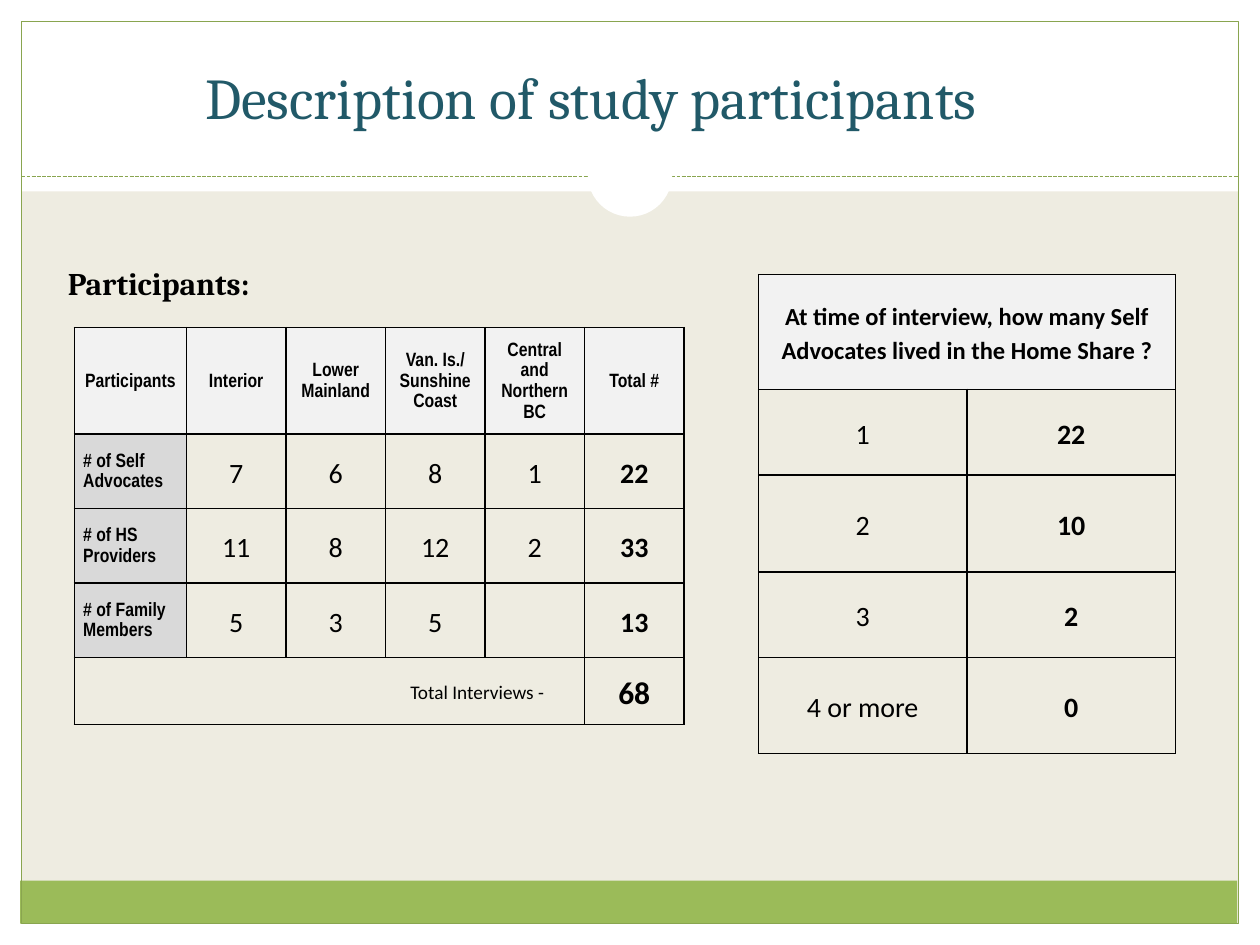
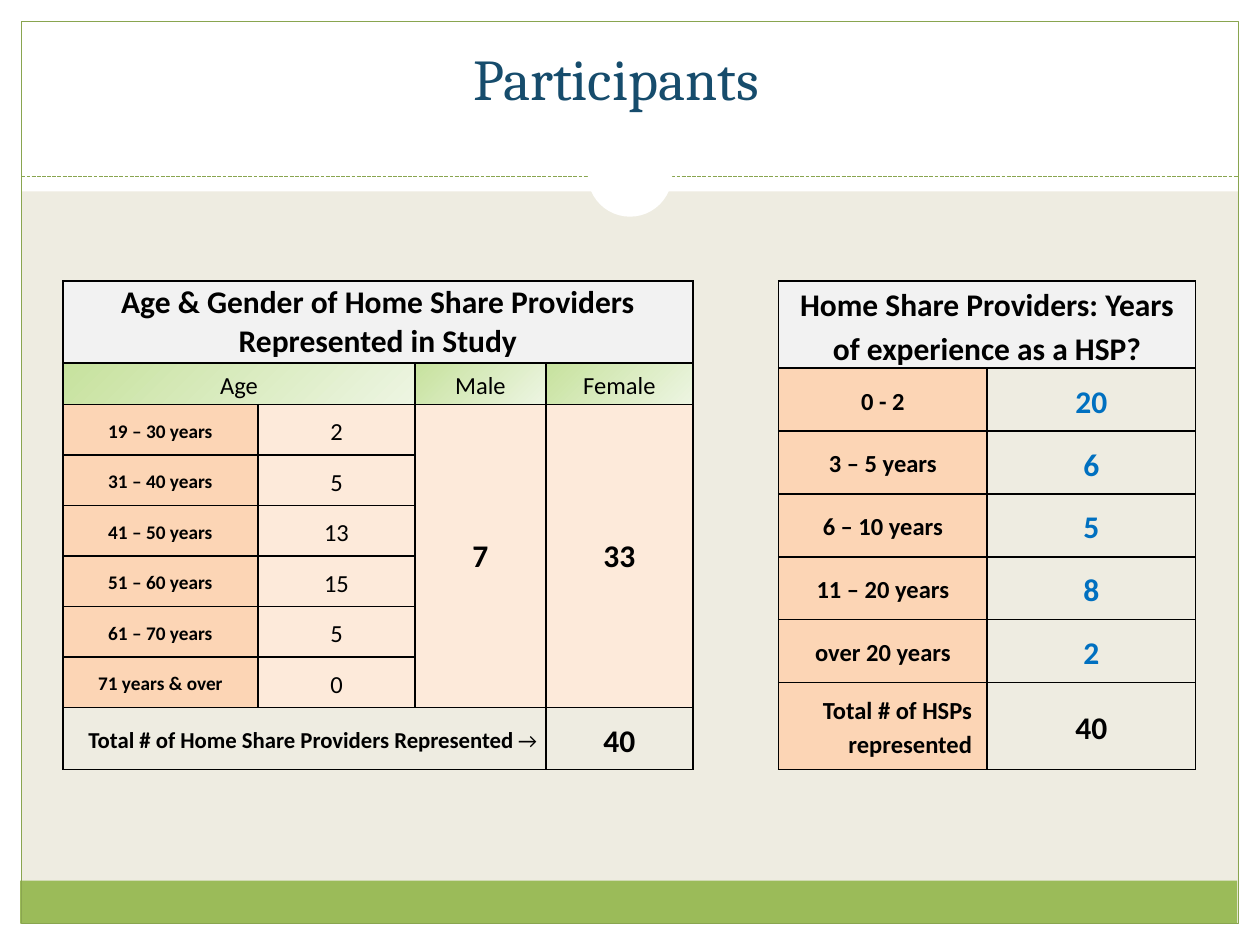
from pptx import Presentation
from pptx.dml.color import RGBColor
from pptx.enum.dml import MSO_LINE
from pptx.enum.shapes import MSO_CONNECTOR, MSO_SHAPE
from pptx.enum.text import MSO_ANCHOR, PP_ALIGN
from pptx.oxml import parse_xml
from pptx.oxml.ns import nsdecls
from pptx.util import Inches, Pt

RECT, OVAL = MSO_SHAPE.RECTANGLE, MSO_SHAPE.OVAL
LINE, DASH = MSO_CONNECTOR.STRAIGHT, MSO_LINE.SQUARE_DOT
LEFT, MID, RIGHT = PP_ALIGN.LEFT, PP_ALIGN.CENTER, PP_ALIGN.RIGHT
CENTRE = MSO_ANCHOR.MIDDLE

# The page is a grid of 100 columns and 75 rows
PAGE = (0, 0, 100, 75)
UNIT = Inches(0.1)

WHITE, BLACK, BLUE = "FFFFFF", "000000", "0070C0"
CREAM, GREEN, EDGE = "EEECE1", "9BBB59", "89A54F"
PALE, GREY = "F2F2F2", "D9D9D9"
PEACH, BLUSH = "FCD5B5", "FDEADA"
LIME = ("C7E29E", "EDF5E2")


def paint(code):
    return RGBColor.from_string(code)


def grid(*cells):
    return [int(n * UNIT) for n in cells]


def apply(part, values):
    for key, value in values.items():
        setattr(part, key, value)


def face(font, size, bold=False, name="Calibri", ink=BLACK):
    apply(font, {"size": Pt(size), "bold": bold, "name": name})
    font.color.rgb = paint(ink)


# Text styles of table cells
def style(size, bold=False, fill=None, name="Calibri", ink=BLACK,
          align=MID, lines=1.15, right=0.07):
    return {
        "font": {"size": size, "bold": bold, "name": name, "ink": ink},
        "para": {"alignment": align, "line_spacing": lines},
        "fill": fill,
        "right": right,
    }


HEAD = style(11, True, PALE, "Arial Narrow")
SIDE = style(11, True, GREY, "Arial Narrow", align=LEFT)
PLAIN, BOLD = style(16), style(16, True)
NOTE = style(11, align=RIGHT, right=0.32)
TOTAL = style(18, True)
ASK = style(14, True, PALE)
BANNER = style(18, True, PALE)
TIGHT = style(18, True, PALE, lines=1.0)
LABEL = style(14, fill=LIME)
AGE, COUNT = style(11, True, PEACH), style(14, fill=BLUSH)
SEX = style(18, True, BLUSH, lines=1.0)
SUM = style(13, True, align=RIGHT)
YEARS = style(14, True, PEACH)
SCORE = style(18, True, ink=BLUE)
ALL = style(14, True, PEACH, align=RIGHT, right=0.12)


# Background, bands and outline shared by the slides
def frame(slide, box):
    x, y, w, h = box
    slide.background.fill.solid()
    slide.background.fill.fore_color.rgb = paint(CREAM)
    rim = 1.7

    def block(kind, spot, fill=None, edge=None):
        shape = slide.shapes.add_shape(kind, *grid(*spot))
        shape.shadow.inherit = False
        if fill:
            shape.fill.solid()
            shape.fill.fore_color.rgb = paint(fill)
        else:
            shape.fill.background()
        if edge:
            shape.line.color.rgb = paint(edge)
            shape.line.width = Pt(0.75)
        else:
            shape.line.fill.background()

    # Title band with its dashed rule and notch
    block(RECT, (x, y, w, 15.2), WHITE)
    rule = slide.shapes.add_connector(
        LINE, *grid(x + rim, y + 14, x + w - rim, y + 14))
    rule.line.color.rgb = paint(EDGE)
    apply(rule.line, {"width": Pt(0.75), "dash_style": DASH})
    rule._element.spPr.append(
        parse_xml(f"<a:effectLst {nsdecls('a')}/>"))
    block(OVAL, (x + w / 2 - 3.35, y + 10.5, 6.7, 6.7), WHITE)

    # White rim
    for spot in ((x, y + h - rim, w, rim), (x, y, w, rim),
                 (x + w - rim, y, rim, h), (x, y, rim, h)):
        block(RECT, spot, WHITE)

    # Footer band and outline
    block(RECT, (x + 1.6, y + 69.9, w - 2 * rim, 3.4), GREEN)
    block(RECT, (x + rim, y + rim, w - 2 * rim, h - 2 * rim), edge=EDGE)


def label(slide, box, text, size, ink, bold=False):
    shape = slide.shapes.add_textbox(*grid(*box))
    shape.text_frame.word_wrap = False
    run = shape.text_frame.paragraphs[0].add_run()
    run.text = text
    face(run.font, size, bold, "Cambria", ink)


def border(cell):
    props = cell._tc.get_or_add_tcPr()
    for side in "LRTB":
        props.append(parse_xml(
            f'<a:ln{side} {nsdecls("a")} w="12700"><a:solidFill>'
            f'<a:srgbClr val="{BLACK}"/></a:solidFill></a:ln{side}>'))


def shade(cell, fill):
    if fill is None:
        cell.fill.background()
    elif isinstance(fill, tuple):
        cell.fill.gradient()
        cell.fill.gradient_angle = 315
        for stop, code in zip(cell.fill.gradient_stops, fill):
            stop.color.rgb = paint(code)
    else:
        cell.fill.solid()
        cell.fill.fore_color.rgb = paint(fill)


def write(cell, text, look):
    shade(cell, look["fill"])
    apply(cell, {"margin_left": Inches(0.07), "vertical_anchor": CENTRE,
                 "margin_right": Inches(look["right"])})
    cell.text = text
    for para in cell.text_frame.paragraphs:
        apply(para, look["para"])
        for run in para.runs:
            face(run.font, **look["font"])


# A row is its height, its texts and its styles; None is a merged cell
def chart(slide, box, cols, rows, spans):
    x, y, w, h = box
    table = slide.shapes.add_table(
        len(rows), len(cols), *grid(x, y, w, h)).table
    apply(table, {"first_row": False, "horz_banding": False})
    for col, part in zip(table.columns, cols):
        col.width = int(w * UNIT * part / sum(cols))
    tall = sum(row[0] for row in rows)
    for r, (part, texts, looks) in enumerate(rows):
        table.rows[r].height = int(h * UNIT * part / tall)
        for c, (text, look) in enumerate(zip(texts, looks)):
            cell = table.cell(r, c)
            apply(cell, {"margin_top": 0, "margin_bottom": 0})
            border(cell)
            if text is not None:
                write(cell, text, look)
    for top, left, low, end in spans:
        table.cell(top, left).merge(table.cell(low, end))
    return table


def study(slide, box):
    x, y, w, h = box
    frame(slide, box)
    label(slide, (x + 15.3, y + 4.4, 69, 6.6),
          "Description of study participants", 33, "215968")
    label(slide, (x + 4.4, y + 20.5, 20, 4), "Participants:", 18, BLACK, True)

    # Participants by region
    looks = [SIDE] + [PLAIN] * 4 + [BOLD]
    body = [
        ["# of Self Advocates", "7", "6", "8", "1", "22"],
        ["# of HS Providers", "11", "8", "12", "2", "33"],
        ["# of Family Members", "5", "3", "5", "", "13"],
    ]
    heads = ["Participants", "Interior", "Lower Mainland",
             "Van. Is./ Sunshine Coast", "Central and Northern BC", "Total #"]
    total = ["Total Interviews -"] + [None] * 4 + ["68"]
    rows = [(0.84, heads, [HEAD] * 6)]
    rows += [(0.59, texts, looks) for texts in body]
    rows += [(0.53, total, [NOTE] * 5 + [TOTAL])]
    chart(slide, (x + 5.9, y + 26, 48.4, 31.5), [0.89] + [0.79] * 5,
          rows, [(4, 0, 4, 4)])

    # Self advocates in each home
    ask = "At time of interview, how many Self Advocates lived in the Home Share ?"
    homes = [(0.68, "1", "22"), (0.77, "2", "10"),
             (0.68, "3", "2"), (0.76, "4 or more", "0")]
    rows = [(0.91, [ask, None], [ASK] * 2)]
    rows += [(part, pair, [PLAIN, BOLD]) for part, *pair in homes]
    chart(slide, (x + 60.2, y + 21.8, 33.1, 38), [1, 1],
          rows, [(0, 0, 0, 1)])


def people(slide, box):
    x, y, w, h = box
    frame(slide, box)
    label(slide, (x + 36.6, y + 2.9, 26.8, 6.6), "Participants", 33, "164C6C")

    # Age and gender
    ages = [("19 – 30 years", "2"), ("31 – 40 years", "5"),
            ("41 – 50 years", "13"), ("51 – 60 years", "15"),
            ("61 – 70 years", "5"), ("71 years & over", "0")]
    title = "Age & Gender of Home Share Providers\nRepresented in Study"
    rows = [(0.65, [title] + [None] * 3, [TIGHT] * 4),
            (0.33, ["Age", None, "Male", "Female"], [LABEL] * 4)]
    for n, pair in enumerate(ages):
        sexes = [None, None] if n else ["7", "33"]
        rows.append((0.4, [*pair, *sexes], [AGE, COUNT, SEX, SEX]))
    total = "Total # of Home Share Providers Represented "
    rows.append((0.49, [total, None, None, "40"], [SUM] * 3 + [TOTAL]))
    table = chart(slide, (x + 5, y + 22.3, 50, 38.8),
                  [1.55, 1.25, 1.04, 1.17], rows,
                  [(0, 0, 0, 3), (1, 0, 1, 1), (2, 2, 7, 2),
                   (2, 3, 7, 3), (8, 0, 8, 2)])
    arrow = table.cell(8, 0).text_frame.paragraphs[0].add_run()
    arrow.text = "→"
    face(arrow.font, 12)

    # Years of experience
    years = [("0 - 2", "20"), ("3 – 5 years", "6"), ("6 – 10 years", "5"),
             ("11 – 20 years", "8"), ("over 20 years", "2")]
    title = "Home Share Providers: Years of experience as a HSP?"
    rows = [(0.69, [title, None], [BANNER] * 2)]
    rows += [(0.5, pair, [YEARS, SCORE]) for pair in years]
    rows += [(0.69, ["Total # of HSPs represented", "40"], [ALL, TOTAL])]
    chart(slide, (x + 61.8, y + 22.3, 33.1, 38.8), [1, 1],
          rows, [(0, 0, 0, 1)])


def main():
    deck = Presentation()
    deck.slide_width, deck.slide_height = grid(*PAGE[2:])
    for build in (study, people):
        build(deck.slides.add_slide(deck.slide_layouts[6]), PAGE)
    deck.save("out.pptx")


if __name__ == "__main__":
    main()
